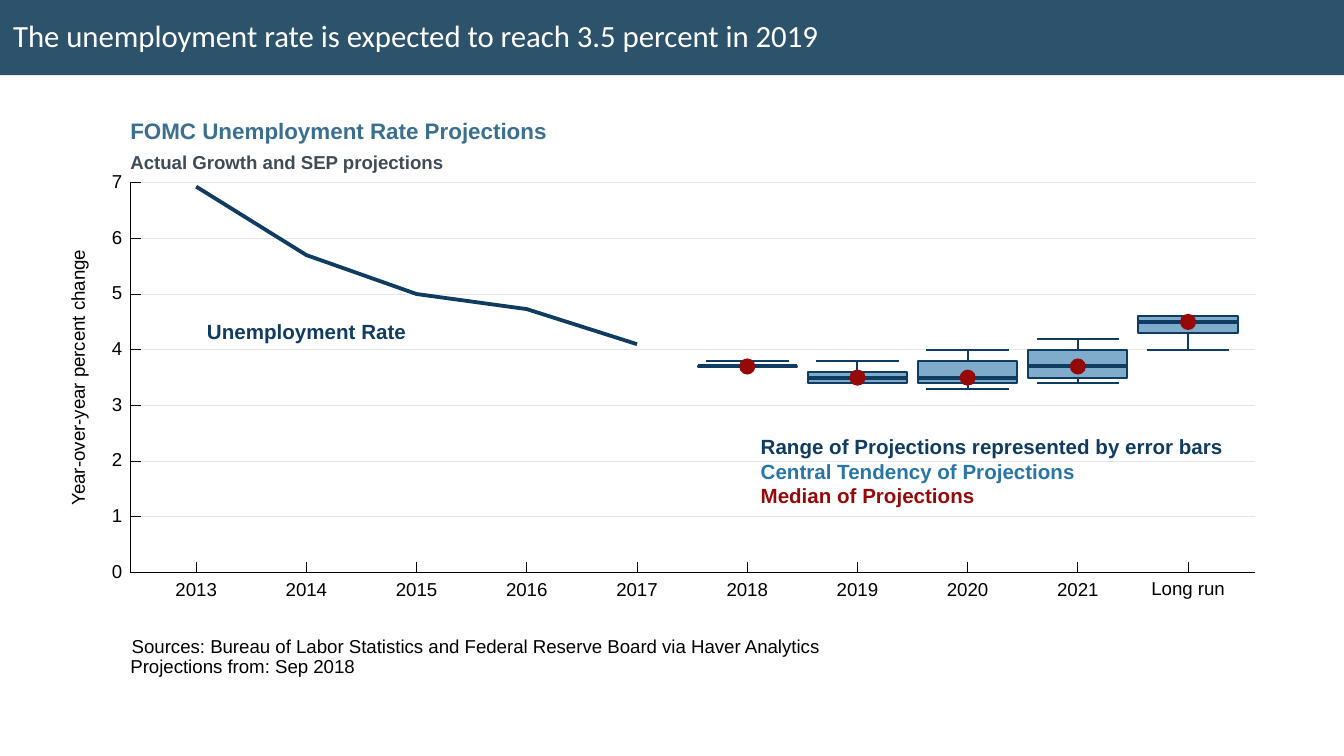
from dataclasses import dataclass

import pptx
import pptx.dml.color
import pptx.enum.shapes
import pptx.enum.text
import pptx.oxml.ns
import pptx.util
from lxml import etree

COLORS = {
    "banner": "2C536B", "white": "FFFFFF", "black": "000000", "grid": "E5E5E5",
    "navy": "103C62", "blue": "2875A8", "red": "960909",
    "heading": "3A6F8F", "subheading": "414B56",
}
SLIDE_W = 10
SLIDE_H = SLIDE_W * 9 / 16
PLOT_LEFT, PLOT_RIGHT, PLOT_BOTTOM = 0.97, 9.34, 4.26
FIRST_COL, COL = 1.46, 0.82
ROWS, ROW = 7, 2.9 / 7
TICK, DOT = 0.08, 0.11
BOX_W, CAP_W = 0.9 * COL, 0.75 * COL
SHAPES = pptx.enum.shapes.MSO_SHAPE
ALIGN = pptx.enum.text.PP_ALIGN


@dataclass
class Label:
    text: str
    left: float
    middle: float
    width: float
    size: float = 10
    color: str = "black"
    bold: bool = False
    align: ALIGN = ALIGN.LEFT
    rotation: float = 0


@dataclass
class Projection:
    col: int
    low: float
    bottom: float
    median: float
    top: float
    high: float


PERIODS = [str(year) for year in range(2013, 2022)] + ["Long run"]
ACTUAL = [6.93, 5.7, 5.0, 4.73, 4.1]
PROJECTIONS = [
    Projection(5, 3.7, 3.7, 3.7, 3.7, 3.8),
    Projection(6, 3.4, 3.4, 3.5, 3.6, 3.8),
    Projection(7, 3.3, 3.4, 3.5, 3.8, 4.0),
    Projection(8, 3.4, 3.5, 3.7, 4.0, 4.2),
    Projection(9, 4.0, 4.3, 4.5, 4.6, 4.6),
]
LABELS = [
    Label("Unemployment Rate", 1.54, 2.48, 1.52, 11, "navy", True),
    Label("Year-over-year percent change", -0.37, 2.8, 1.92, rotation=270),
    Label("FOMC Unemployment Rate Projections", PLOT_LEFT, 0.99, 3.14, 12, "heading", True),
    Label("Actual Growth and SEP projections", PLOT_LEFT, 1.22, 2.38, 10, "subheading", True),
    Label("Sources: Bureau of Labor Statistics and Federal Reserve Board via Haver Analytics",
          0.98, 4.82, 5.18),
    Label("Projections from: Sep 2018", PLOT_LEFT, 4.97, 1.72),
    Label("Range of Projections represented by error bars", 5.66, 3.34, 3.48, 11, "navy", True),
    Label("Central Tendency of Projections", 5.66, 3.52, 2.38, 11, "blue", True),
    Label("Median of Projections", 5.66, 3.7, 1.64, 11, "red", True),
]


def inch(value: float) -> int:
    return pptx.util.Inches(value)


def rgb(name: str):
    return pptx.dml.color.RGBColor.from_string(COLORS[name])


def x_at(col: float) -> float:
    return FIRST_COL + col * COL


def y_at(value: float) -> float:
    return PLOT_BOTTOM - value * ROW


def add_line(s, x1: float, y1: float, x2: float, y2: float, color: str, width: float):
    sp = s.shapes.add_connector(pptx.enum.shapes.MSO_CONNECTOR.STRAIGHT,
                                inch(x1), inch(y1), inch(x2), inch(y2))
    sp.line.color.rgb = rgb(color)
    sp.line.width = pptx.util.Pt(width)
    etree.SubElement(sp._element.spPr, pptx.oxml.ns.qn("a:effectLst"))
    return sp


def add_block(s, kind, left: float, top: float, width: float, height: float,
              fill: str, line: str = "", line_width: float = 0):
    sp = s.shapes.add_shape(kind, inch(left), inch(top), inch(width), inch(height))
    sp.shadow.inherit = False
    sp.fill.solid()
    sp.fill.fore_color.rgb = rgb(fill)
    if line:
        sp.line.color.rgb = rgb(line)
        sp.line.width = pptx.util.Pt(line_width)
    else:
        sp.line.fill.background()
    return sp


def add_label(s, label: Label) -> None:
    height = 0.14
    sp = s.shapes.add_textbox(inch(label.left), inch(label.middle - height / 2),
                              inch(label.width), inch(height))
    sp.rotation = label.rotation
    tf = sp.text_frame
    tf.margin_left = tf.margin_right = tf.margin_top = tf.margin_bottom = 0
    tf.word_wrap = False
    tf.vertical_anchor = pptx.enum.text.MSO_ANCHOR.MIDDLE
    p = tf.paragraphs[0]
    p.text = label.text
    p.alignment = label.align
    p.line_spacing = pptx.util.Pt(label.size)
    p.font.name = "Arial"
    p.font.size = pptx.util.Pt(label.size)
    p.font.bold = label.bold
    p.font.color.rgb = rgb(label.color)


def add_title(s, text: str) -> None:
    sp = add_block(s, SHAPES.RECTANGLE, 0, 0, SLIDE_W, 0.56, "banner")
    tf = sp.text_frame
    tf.word_wrap = True
    tf.vertical_anchor = pptx.enum.text.MSO_ANCHOR.MIDDLE
    p = tf.paragraphs[0]
    p.text = text
    p.alignment = ALIGN.LEFT
    p.line_spacing = 0.9
    p.font.name = "Calibri"
    p.font.size = pptx.util.Pt(16.5)
    p.font.color.rgb = rgb("white")


def add_projection(s, item: Projection) -> None:
    x = x_at(item.col)
    left, right = x - BOX_W / 2, x + BOX_W / 2
    box = add_block(s, SHAPES.RECTANGLE, left, y_at(item.top), BOX_W,
                    (item.top - item.bottom) * ROW, "blue", "navy", 1.07)
    color = box.fill._xPr.find(".//" + pptx.oxml.ns.qn("a:srgbClr"))
    etree.SubElement(color, pptx.oxml.ns.qn("a:alpha"), val="60000")
    for edge, end, side in ((item.top, item.high, 0), (item.bottom, item.low, 2)):
        y = y_at(end)
        add_line(s, x - CAP_W / 2, y, x + CAP_W / 2, y, "navy", 1.07)
        if edge != end:
            whisker = add_line(s, x, y_at(edge), x, y, "navy", 1.07)
            whisker.begin_connect(box, side)
    y = y_at(item.median)
    add_line(s, left, y, right, y, "navy", 2.13)
    add_block(s, SHAPES.OVAL, x - DOT / 2, y - DOT / 2, DOT, DOT, "red", "red", 0.71)


def add_actual(s) -> None:
    points = [(inch(x_at(i)), inch(y_at(value))) for i, value in enumerate(ACTUAL)]
    builder = s.shapes.build_freeform(*points[0])
    builder.add_line_segments(points[1:], close=False)
    sp = builder.convert_to_shape()
    sp.shadow.inherit = False
    sp.fill.background()
    sp.line.color.rgb = rgb("navy")
    sp.line.width = pptx.util.Pt(2.03)


def add_axes(s) -> None:
    add_line(s, PLOT_LEFT, PLOT_BOTTOM, PLOT_LEFT, y_at(ROWS), "black", 0.53)
    add_line(s, PLOT_LEFT, PLOT_BOTTOM, PLOT_RIGHT, PLOT_BOTTOM, "black", 0.53)
    for value in range(ROWS + 1):
        y = y_at(value)
        add_line(s, PLOT_LEFT, y, PLOT_LEFT + TICK, y, "black", 0.53)
        add_label(s, Label(str(value), 0.83, y, 0.08, align=ALIGN.RIGHT))
    for col, period in enumerate(PERIODS):
        x = x_at(col)
        add_line(s, x, PLOT_BOTTOM - TICK, x, PLOT_BOTTOM, "black", 0.53)
        width, middle = (0.31, 4.4) if period.isdigit() else (0.55, 4.39)
        add_label(s, Label(period, x - width / 2, middle, width, align=ALIGN.CENTER))


def main() -> None:
    prs = pptx.Presentation()
    prs.slide_width, prs.slide_height = inch(SLIDE_W), inch(SLIDE_H)
    s = prs.slides.add_slide(prs.slide_layouts[6])
    add_title(s, "The unemployment rate is expected to reach 3.5 percent in 2019")
    for value in range(ROWS + 1):
        add_line(s, PLOT_LEFT, y_at(value), PLOT_RIGHT, y_at(value), "grid", 0.53)
    for item in PROJECTIONS:
        add_projection(s, item)
    add_actual(s)
    add_axes(s)
    for label in LABELS:
        add_label(s, label)
    prs.save("out.pptx")


if __name__ == "__main__":
    main()
